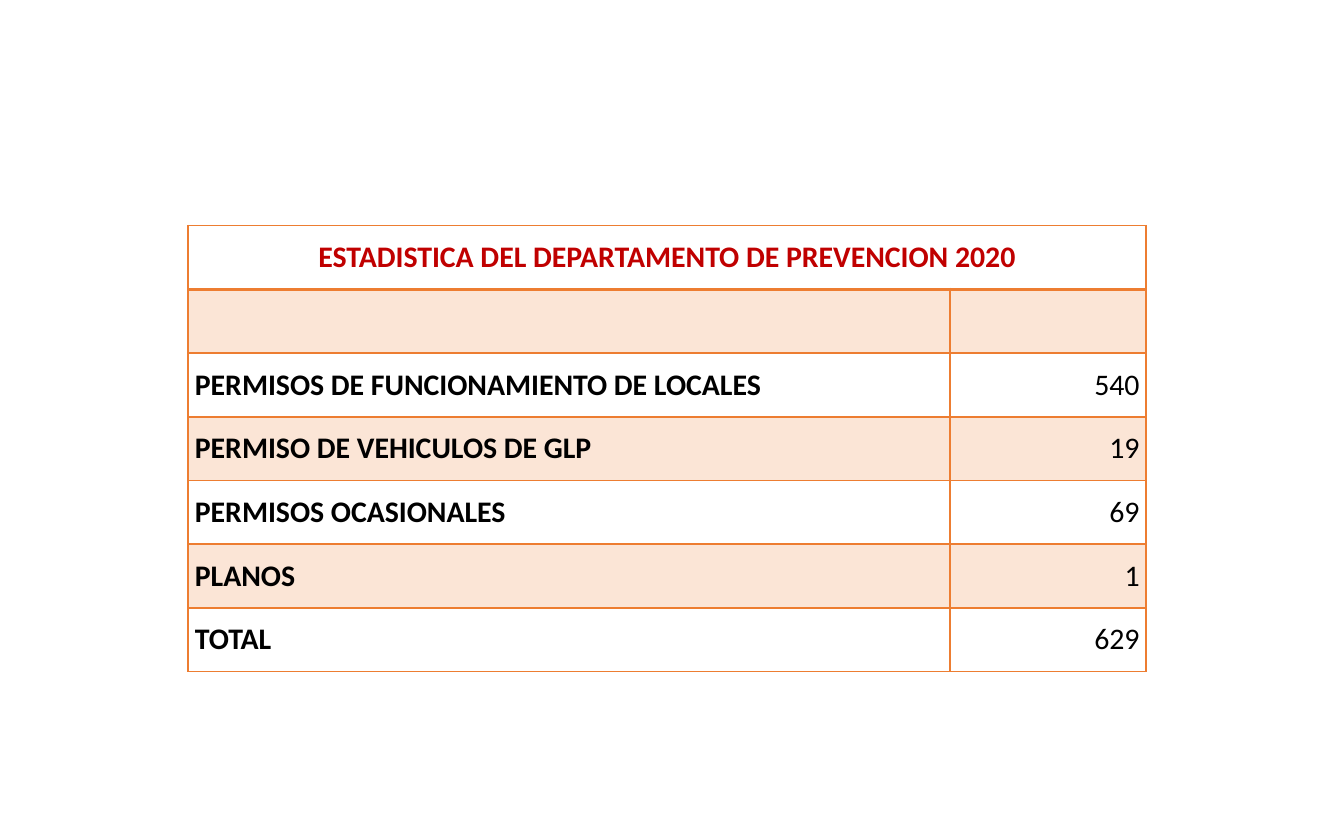
import lxml.etree
import pptx
import pptx.dml.color
import pptx.enum.text
import pptx.oxml.ns
import pptx.util

Pt = pptx.util.Pt
ALIGN = pptx.enum.text.PP_ALIGN

TITLE = "ESTADISTICA DEL DEPARTAMENTO DE PREVENCION 2020"
ROWS = [
    (TITLE, ""),
    ("", ""),
    ("PERMISOS DE FUNCIONAMIENTO DE LOCALES", "540"),
    ("PERMISO DE VEHICULOS DE GLP", "19"),
    ("PERMISOS OCASIONALES", "69"),
    ("PLANOS", "1"),
    ("TOTAL", "629"),
]
COLUMN_WIDTHS = (408.2, 105.1)
ROW_HEIGHT = 34.15
ORANGE, PEACH, RED, BLACK = "ED7D31", "FBE5D6", "C00000", "000000"


def color(hex_text):
    """Turn a hex string into a colour."""
    return pptx.dml.color.RGBColor.from_string(hex_text)


def set_borders(cell, top=1, bottom=1):
    """Draw orange lines on the four sides of a cell."""
    properties = cell._tc.get_or_add_tcPr()
    sides = {"lnL": 1, "lnR": 1, "lnT": top, "lnB": bottom}
    for index, (side, width) in enumerate(sides.items()):
        line = lxml.etree.Element(pptx.oxml.ns.qn(f"a:{side}"), w=str(Pt(width)))
        fill = lxml.etree.SubElement(line, pptx.oxml.ns.qn("a:solidFill"))
        lxml.etree.SubElement(fill, pptx.oxml.ns.qn("a:srgbClr"), val=ORANGE)
        properties.insert(index, line)


def set_fill(cell, banded):
    """Tint a banded cell and leave any other cell clear."""
    if banded:
        cell.fill.solid()
        cell.fill.fore_color.rgb = color(PEACH)
    else:
        cell.fill.background()


def set_text(cell, text, text_color, bold, align):
    """Write the text of a cell and format it."""
    cell.margin_left = cell.margin_right = Pt(3.6)
    cell.margin_top = cell.margin_bottom = Pt(0)
    cell.vertical_anchor = pptx.enum.text.MSO_ANCHOR.MIDDLE
    para = cell.text_frame.paragraphs[0]
    para.text = text
    para.alignment = align
    for span in para.runs:
        span.font.name = "Calibri"
        span.font.size = Pt(16)
        span.font.bold = bold
        span.font.color.rgb = color(text_color)


def add_statistics_table(page):
    """Add the table of permits with its merged title row."""
    frame = page.shapes.add_table(
        len(ROWS), len(COLUMN_WIDTHS), Pt(100.8), Pt(120.9),
        Pt(sum(COLUMN_WIDTHS)), Pt(ROW_HEIGHT * len(ROWS)))
    table = frame.table
    table.first_row = table.horz_banding = False
    for column, width in zip(table.columns, COLUMN_WIDTHS):
        column.width = Pt(width)
    table.cell(0, 0).merge(table.cell(0, 1))
    for row_index, texts in enumerate(ROWS):
        table.rows[row_index].height = Pt(ROW_HEIGHT)
        is_title = row_index == 0
        for column_index, text in enumerate(texts):
            cell = table.cell(row_index, column_index)
            is_label = column_index == 0
            align = ALIGN.LEFT if is_label else ALIGN.RIGHT
            set_text(cell, text, RED if is_title else BLACK, is_label,
                     ALIGN.CENTER if is_title else align)
            set_fill(cell, row_index % 2 == 1)
            set_borders(cell, top=2 if row_index == 1 else 1,
                        bottom=2 if is_title else 1)


def main():
    """Build the slide and save it."""
    deck = pptx.Presentation()
    deck.slide_width, deck.slide_height = Pt(720), Pt(450)
    page = deck.slides.add_slide(deck.slide_layouts[6])
    add_statistics_table(page)
    deck.save("out.pptx")


if __name__ == "__main__":
    main()
